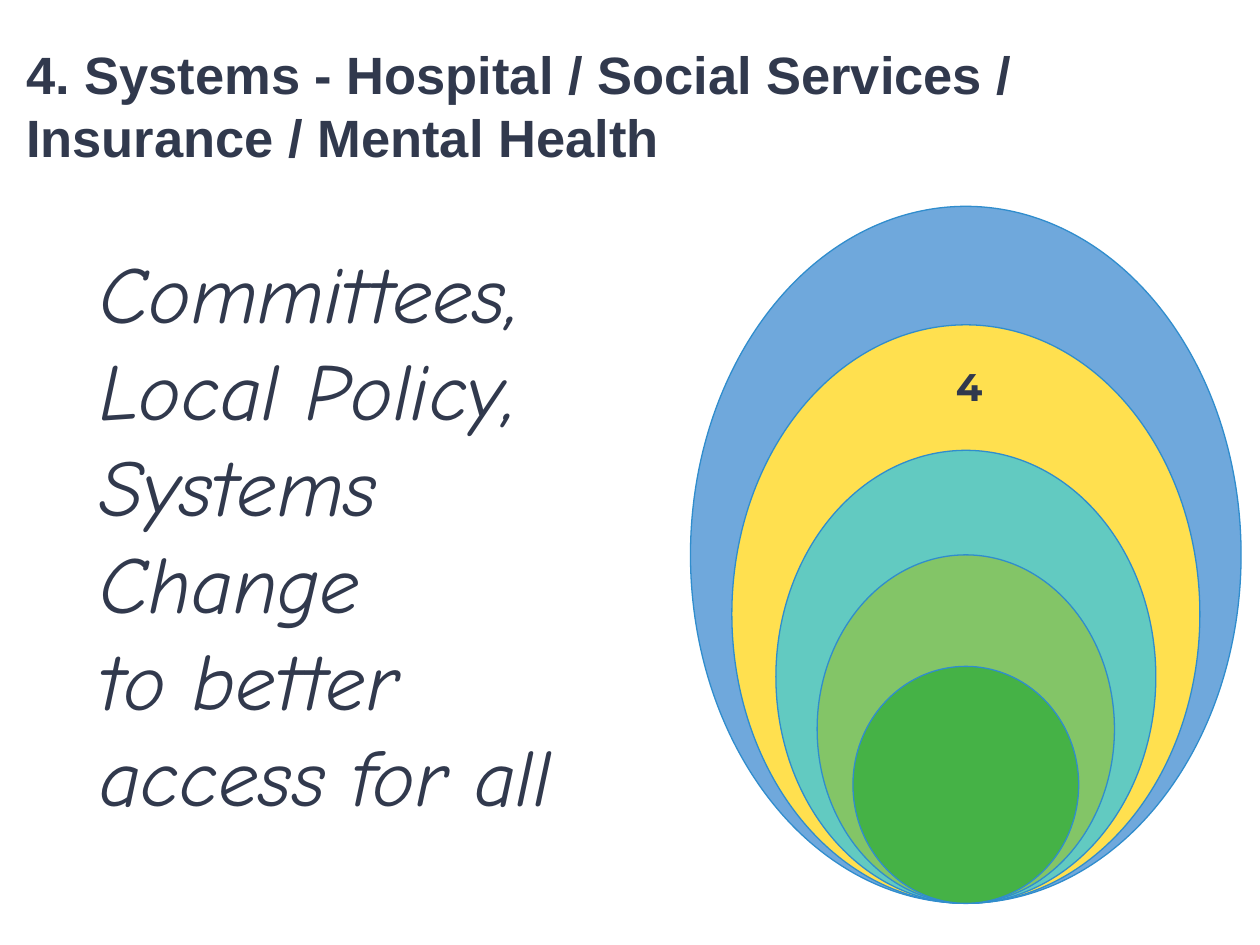
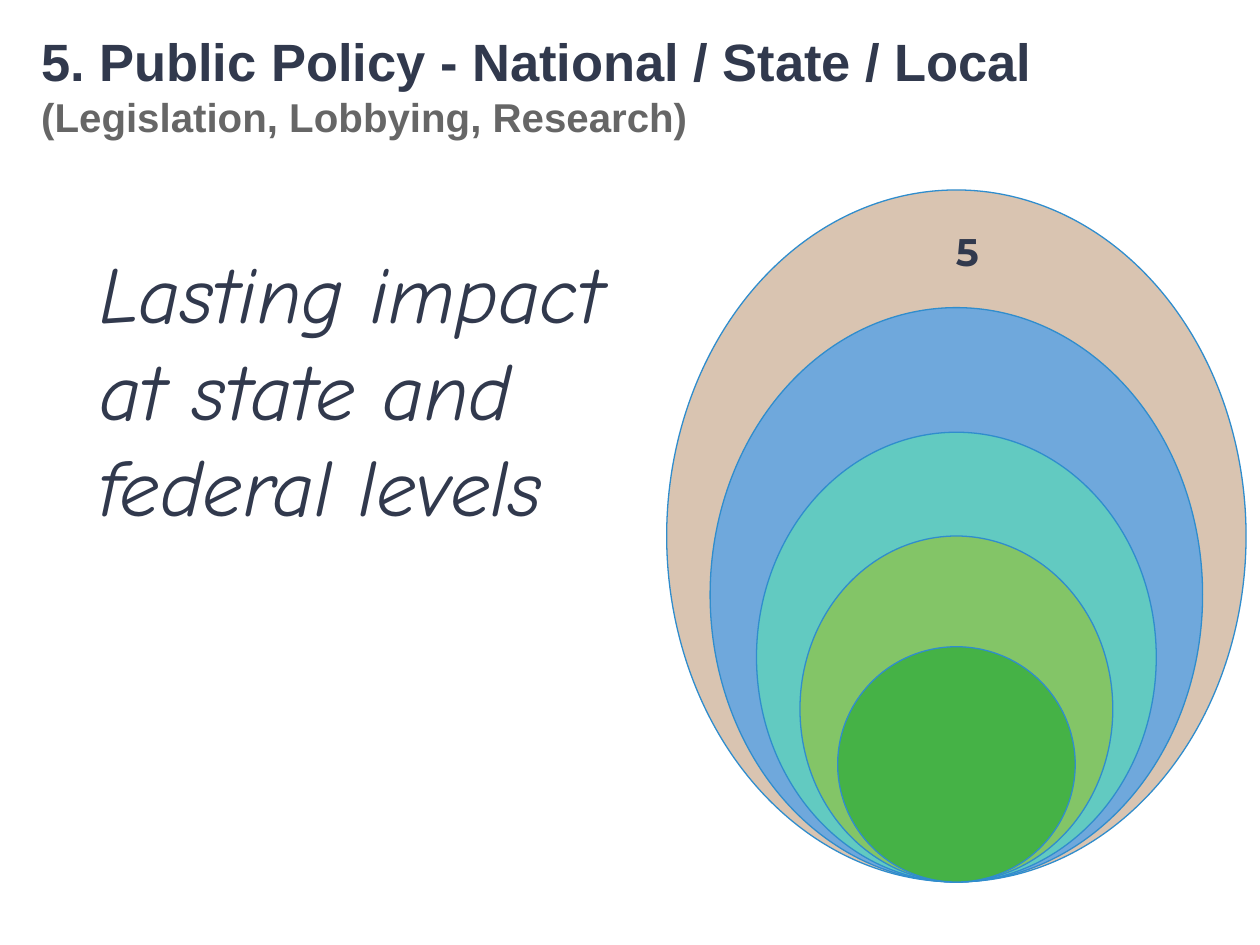
from pptx import Presentation
from pptx.dml.color import RGBColor
from pptx.enum.shapes import MSO_SHAPE
from pptx.enum.text import MSO_ANCHOR
from pptx.util import Cm, Pt

# Shared look
NAVY, GRAY, OUTLINE = "31394D", "666666", "308DCD"
BLUE, YELLOW, TEAL, LIGHT_GREEN, GREEN, SAND = (
    "6FA8DC", "FFE04F", "62CAC1", "83C567", "45B246", "D9C4B1")
TITLE = {"name": "Arial", "size": Pt(30), "bold": True, "color": NAVY}
SUBTITLE = {**TITLE, "size": Pt(23), "color": GRAY}
MESSAGE = {"name": "Comic Neue", "size": Pt(46), "italic": True, "color": NAVY}
NUMBER = {"name": "Montserrat", "size": Pt(22), "bold": True, "color": NAVY}

# Ring sizes as shares of the outer ring: width, height
RING_SHARES = [(1, 1), (0.85, 0.83), (0.69, 0.65), (0.54, 0.5), (0.41, 0.34)]
NUMBER_DROP = 0.52

# Lengths in centimetres; each paragraph is a list of (text, format) runs
SLIDES = [
    {
        "title": [("4. Systems - Hospital / Social Services / "
                   "Insurance / Mental Health", TITLE)],
        "title_box": (0.28, 0.53, 24.43, 3.61),
        "message": ["Committees, Local Policy, Systems Change",
                    "to better access for all"],
        "message_height": 10.34,
        "colors": [BLUE, YELLOW, TEAL, LIGHT_GREEN, GREEN],
        "outer": (11.1, 14.05), "center": 19.47, "bottom": 18.21,
        "number": "4", "numbered_ring": 1,
    },
    {
        "title": [("5. Public Policy - National / State / Local", TITLE),
                  (" (Legislation, Lobbying, Research)", SUBTITLE)],
        "title_box": (0.58, 0.28, 24.71, 3.3),
        "message": ["Lasting impact at state and federal levels"],
        "message_height": 6.4,
        "colors": [SAND, BLUE, TEAL, LIGHT_GREEN, GREEN],
        "outer": (11.68, 13.95), "center": 19.28, "bottom": 17.78,
        "number": "5", "numbered_ring": 0,
    },
]


def rgb(hex_color):
    return RGBColor.from_string(hex_color)


def add_text(shapes, box, paragraphs, margins, anchor=MSO_ANCHOR.TOP):
    frame = shapes.add_textbox(*[Cm(length) for length in box]).text_frame
    settings = {"word_wrap": True, "vertical_anchor": anchor}
    sides = ("margin_left", "margin_top", "margin_right", "margin_bottom")
    settings.update(zip(sides, [Cm(margin) for margin in margins]))
    for name, value in settings.items():
        setattr(frame, name, value)
    for index, runs in enumerate(paragraphs):
        paragraph = frame.add_paragraph() if index else frame.paragraphs[0]
        for text, text_format in runs:
            run = paragraph.add_run()
            run.text = text
            for name, value in text_format.items():
                if name == "color":
                    run.font.color.rgb = rgb(value)
                else:
                    setattr(run.font, name, value)


presentation = Presentation()
presentation.slide_width = Cm(25.4)
presentation.slide_height = Cm(19.05)

for content in SLIDES:
    slide = presentation.slides.add_slide(presentation.slide_layouts[6])

    # Title, resting on the lower edge of its box
    add_text(slide.shapes, content["title_box"], [content["title"]],
             (0.25, 0.13, 0.25, 0.75), MSO_ANCHOR.BOTTOM)

    # Nested rings sharing one lowest point
    rings = slide.shapes.add_group_shape().shapes
    outer_width, outer_height = content["outer"]
    ring_tops = []
    for (width_share, height_share), color in zip(RING_SHARES, content["colors"]):
        width, height = outer_width * width_share, outer_height * height_share
        left, top = content["center"] - width / 2, content["bottom"] - height
        ring_tops.append(top)
        ring = rings.add_shape(MSO_SHAPE.OVAL, Cm(left), Cm(top), Cm(width), Cm(height))
        ring.shadow.inherit = False
        ring.fill.solid()
        ring.fill.fore_color.rgb = rgb(color)
        ring.line.color.rgb = rgb(OUTLINE)
        ring.line.width = Pt(0.75)

    # Number near the top of the ring under discussion
    number_top = ring_tops[content["numbered_ring"]] + NUMBER_DROP
    add_text(rings, (19.02, number_top, 0.62, 1.45),
             [[(content["number"], NUMBER)]], [0.25] * 4)

    # Message on the left
    add_text(slide.shapes, (1.75, 4.65, 10.97, content["message_height"]),
             [[(text, MESSAGE)] for text in content["message"]], [0.25] * 4)

presentation.save("out.pptx")
